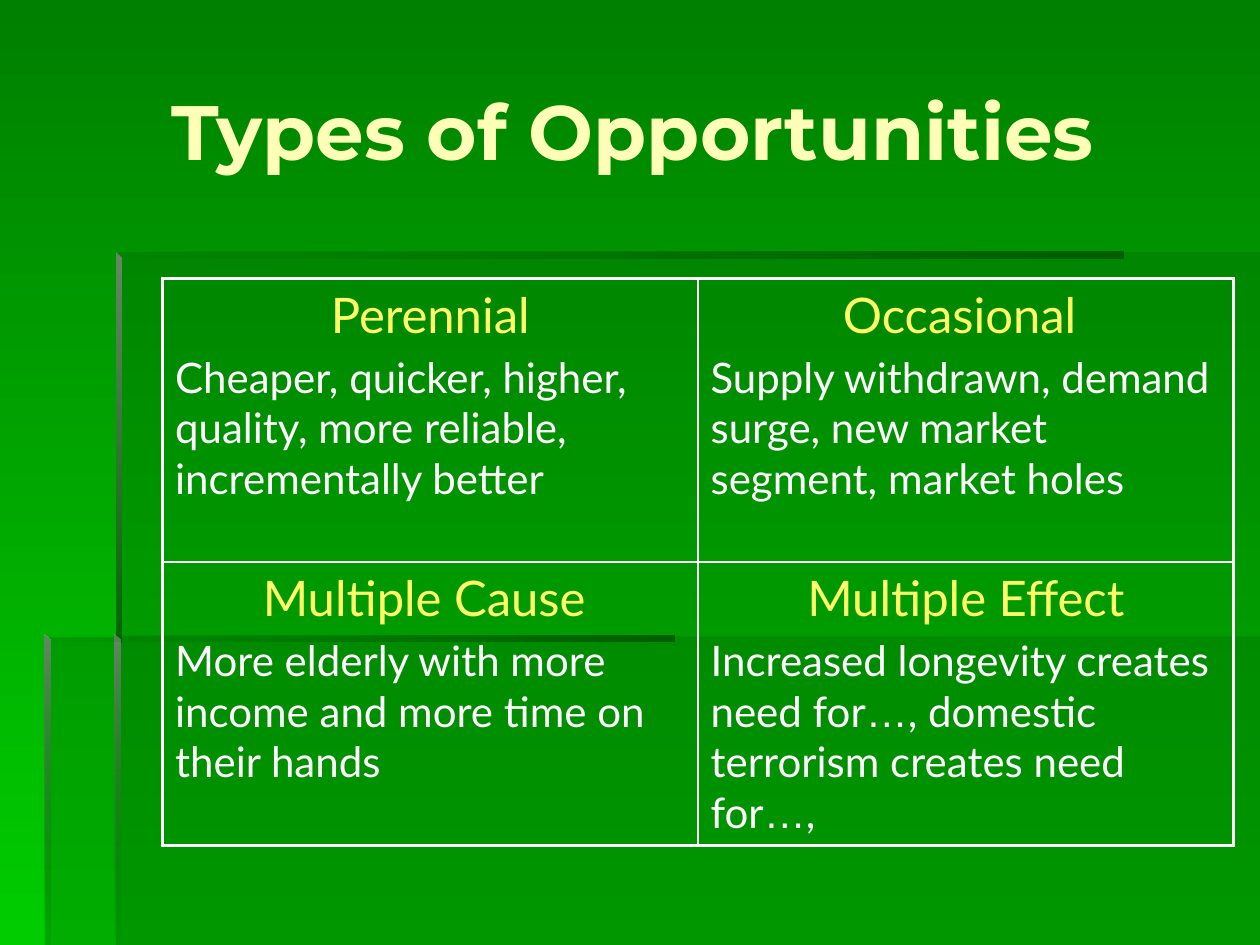
from lxml import etree
from pptx import Presentation
from pptx.dml.color import RGBColor
from pptx.enum.text import MSO_ANCHOR, PP_ALIGN
from pptx.oxml.ns import qn
from pptx.util import Inches, Pt

CENTER, LEFT, MIDDLE = PP_ALIGN.CENTER, PP_ALIGN.LEFT, MSO_ANCHOR.MIDDLE

TOP_GREEN = RGBColor(0x00, 0x80, 0x00)
BOTTOM_GREEN = RGBColor(0x00, 0xCC, 0x00)
PANEL_GREEN = RGBColor(0x00, 0x66, 0x00)
SHADE_GREEN = RGBColor(0x00, 0x5E, 0x00)
EDGE_GREEN = RGBColor(0x66, 0x86, 0x66)
TITLE_CREAM = RGBColor(0xFF, 0xFF, 0xB7)
HEADING_YELLOW = RGBColor(0xFF, 0xFF, 0x66)
WHITE = RGBColor(0xFF, 0xFF, 0xFF)

WIDTH, HEIGHT = 10, 7.5
BAR = 0.05
UPPER_X, UPPER_Y = 0.92, 2
LOWER_X, LOWER_Y = 0.35, 5.04
ACROSS, DOWN = 0, 270  # gradient angles, counter-clockwise
OUTER, INNER = 2.25, 1  # border widths in points

QUADRANTS = [
    [("Perennial", "Cheaper, quicker, higher, quality, more reliable, "
      "incrementally better"),
     ("Occasional ", "Supply withdrawn, demand surge, new market segment, "
      "market holes")],
    [("Multiple Cause ", "More elderly with more income and more time on "
      "their hands"),
     ("Multiple Effect", "Increased longevity creates need for…, domestic "
      "terrorism creates need for…,")],
]


def set_gradient(fill, colors, angle):
    fill.gradient()
    fill.gradient_angle = angle
    for stop, color in zip(fill.gradient_stops, colors):
        stop.color.rgb = color


def set_opacity(shape, percents):
    """Give each fill colour of the shape its opacity, in order."""
    colors = shape._element.spPr.iter(qn("a:srgbClr"))
    for color, percent in zip(colors, percents):
        if percent < 100:
            alpha = etree.SubElement(color, qn("a:alpha"))
            alpha.set("val", str(percent * 1000))


def add_outline(page, points):
    start, *rest = [(Inches(x), Inches(y)) for x, y in points]
    builder = page.shapes.build_freeform(*start)
    builder.add_line_segments(rest, close=True)
    shape = builder.convert_to_shape()
    shape.shadow.inherit = False
    shape.line.fill.background()
    return shape


def add_panel(page, points):
    panel = add_outline(page, points)
    panel.fill.solid()
    panel.fill.fore_color.rgb = PANEL_GREEN
    set_opacity(panel, [30])


def add_top_bar(page, left, top, length):
    right, bottom = left + length, top + BAR
    bar = add_outline(page, [(left, top), (left, bottom),
                             (right, bottom), (right, top)])
    set_gradient(bar.fill, [PANEL_GREEN, SHADE_GREEN], ACROSS)
    set_opacity(bar, [0, 100])


def add_side_bar(page, left, top, bottom, end_opacity):
    """Add an upright bar with a mitred top."""
    right = left + BAR
    bar = add_outline(page, [(left, top), (left, bottom),
                             (right, bottom), (right, top + BAR)])
    set_gradient(bar.fill, [EDGE_GREEN, PANEL_GREEN], DOWN)
    set_opacity(bar, [100, end_opacity])


def add_backdrop(page):
    set_gradient(page.background.fill, [TOP_GREEN, BOTTOM_GREEN], DOWN)
    add_panel(page, [(UPPER_X, 5.05), (UPPER_X, HEIGHT),
                     (WIDTH, HEIGHT), (WIDTH, 5.05)])
    add_panel(page, [(0.94, 5.06), (0.36, 5.06), (0.36, HEIGHT),
                     (WIDTH, HEIGHT), (WIDTH, UPPER_Y), (0.94, UPPER_Y)])
    add_top_bar(page, UPPER_X, UPPER_Y, 8)
    add_side_bar(page, UPPER_X, UPPER_Y, 5.1, 100)
    add_side_bar(page, 0.91, LOWER_Y, HEIGHT, 0)
    add_top_bar(page, LOWER_X, LOWER_Y, 5)
    add_side_bar(page, LOWER_X, LOWER_Y, HEIGHT, 10)


def format_title(title, text):
    title.left, title.top = Inches(1.26), Inches(0.23)
    title.width, title.height = Inches(8.52), Inches(1.6)
    frame = title.text_frame
    frame.text = text
    frame.vertical_anchor = MIDDLE
    para = frame.paragraphs[0]
    para.alignment = LEFT
    set_font(para.font, "Montserrat", 44, TITLE_CREAM)
    para.font.bold = True


def set_font(font, name, size, color):
    font.name, font.size = name, Pt(size)
    font.color.rgb = color


def set_borders(cell, widths):
    """Draw white borders; widths are left, right, top, bottom in points."""
    properties = cell._tc.get_or_add_tcPr()
    for index, (side, width) in enumerate(zip("LRTB", widths)):
        line = etree.Element(qn(f"a:ln{side}"), w=str(Pt(width)))
        solid = etree.SubElement(line, qn("a:solidFill"))
        etree.SubElement(solid, qn("a:srgbClr"), val=str(WHITE))
        properties.insert(index, line)


def fill_cell(cell, heading, body):
    cell.fill.background()
    frame = cell.text_frame
    frame.text = heading
    heading_para = frame.paragraphs[0]
    heading_para.alignment = CENTER
    set_font(heading_para.font, "Lato", 28, HEADING_YELLOW)

    body_para = frame.add_paragraph()
    body_para.space_before = Pt(4.8)
    set_font(body_para.font, "Lato", 24, WHITE)
    for index, part in enumerate(body.split("…")):
        if index:
            ellipsis = body_para.add_run()
            ellipsis.text = "…"
            ellipsis.font.name = "Arial"
        span = body_para.add_run()
        span.text = part


def add_quadrants(page, quadrants):
    rows, columns = len(quadrants), len(quadrants[0])
    table = page.shapes.add_table(rows, columns, Inches(1.29), Inches(2.21),
                                  Inches(8.5), Inches(4.5)).table
    table.first_row = table.horz_banding = False
    for r, row in enumerate(quadrants):
        for c, (heading, body) in enumerate(row):
            cell = table.cell(r, c)
            fill_cell(cell, heading, body)
            on_edge = (c == 0, c == columns - 1, r == 0, r == rows - 1)
            set_borders(cell, [OUTER if edge else INNER for edge in on_edge])


def main():
    deck = Presentation()
    deck.slide_width, deck.slide_height = Inches(WIDTH), Inches(HEIGHT)
    page = deck.slides.add_slide(deck.slide_layouts[5])
    add_backdrop(page)
    format_title(page.shapes.title, "Types of Opportunities")
    add_quadrants(page, QUADRANTS)
    deck.save("out.pptx")


if __name__ == "__main__":
    main()
